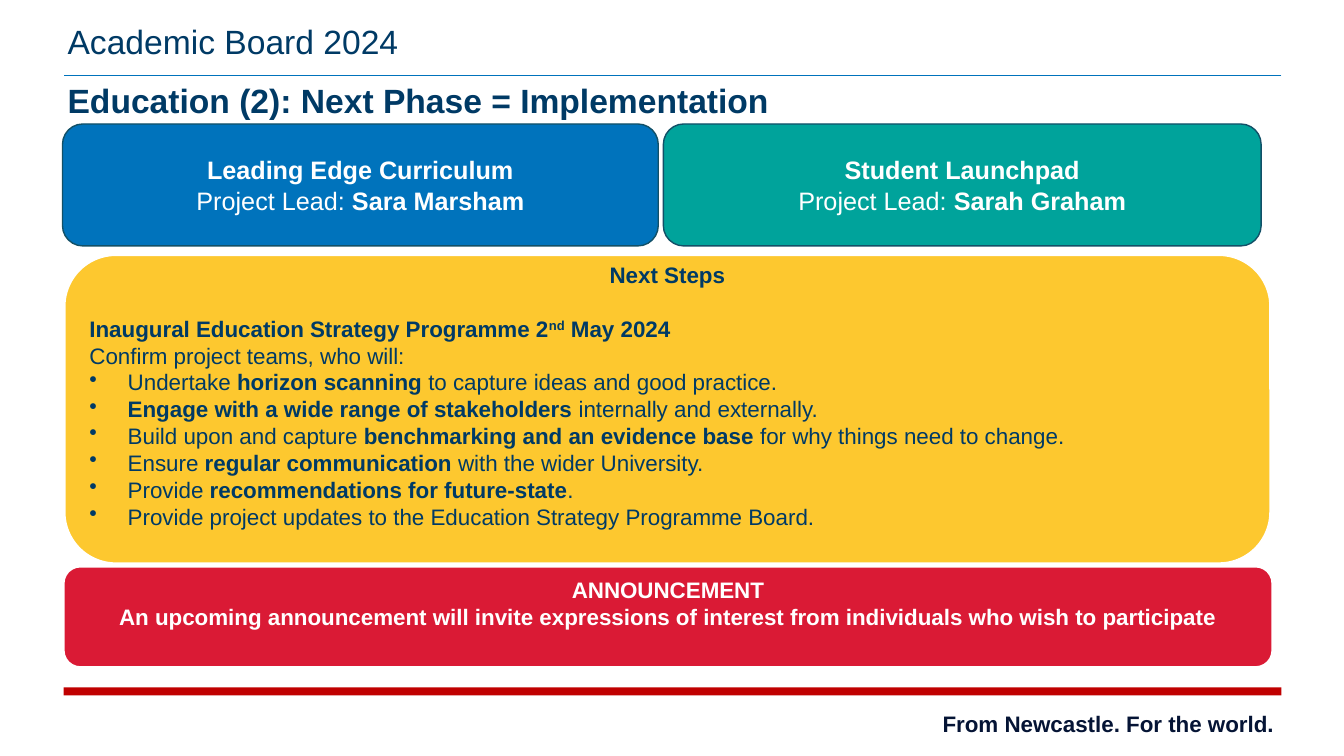
"""Build the Academic Board slide on the next phase of the education programme."""
import lxml.etree
import pptx
import pptx.dml.color
import pptx.enum.shapes
import pptx.enum.text
import pptx.oxml.ns
import pptx.util

COLORS = {
    "navy": "003A65", "ink": "051435", "blue": "0073BC", "teal": "00A39B",
    "outline": "125067", "yellow": "FDC82F", "red": "DA1A35",
    "rule": "C00000", "white": "FFFFFF",
}
SLIDE_WIDTH = pptx.util.Inches(13.33)
SLIDE_HEIGHT = pptx.util.Inches(7.5)
LEFT = pptx.enum.text.PP_ALIGN.LEFT
CENTER = pptx.enum.text.PP_ALIGN.CENTER
MIDDLE = pptx.enum.text.MSO_ANCHOR.MIDDLE
SHAPES = pptx.enum.shapes.MSO_SHAPE

PROJECTS = [
    ("Leading Edge Curriculum", "Sara Marsham", "blue", (4.65, 16.4, 44.33, 16.13)),
    ("Student Launchpad", "Sarah Graham", "teal", (49.36, 16.4, 44.48, 16.13)),
]
NEXT_STEPS = [
    "*Next Steps*",
    "*Inaugural Education Strategy Programme 2**nd** May 2024*",
    "Confirm project teams, who will:",
    "Undertake *horizon scanning *to capture ideas and good practice.",
    "*Engage with a wide range of stakeholders *internally and externally.",
    "Build upon and capture *benchmarking and an evidence base *for why things need to change.",
    "Ensure *regular communication *with the wider University.",
    "Provide *recommendations for future-state*.",
    "Provide project updates to the Education Strategy Programme Board.",
]
ANNOUNCEMENT = [
    "*ANNOUNCEMENT*",
    "*An upcoming announcement will invite expressions of interest "
    "from individuals who wish to participate*",
]


def rgb(name):
    """Return the named colour."""
    return pptx.dml.color.RGBColor.from_string(COLORS[name])


def area(left, top, width, height):
    """Turn percentages of the slide into lengths."""
    return (int(SLIDE_WIDTH * left / 100), int(SLIDE_HEIGHT * top / 100),
            int(SLIDE_WIDTH * width / 100), int(SLIDE_HEIGHT * height / 100))


def style_run(run, size, color, bold):
    """Set the font of one run."""
    run.font.name = "Arial"
    run.font.size = pptx.util.Pt(size)
    run.font.bold = bold
    run.font.color.rgb = rgb(color)


def set_indent(paragraph, inches, bullet):
    """Give a paragraph a hanging indent and a bullet, or neither."""
    properties = paragraph._p.get_or_add_pPr()
    indent = pptx.util.Inches(inches)
    properties.set("marL", str(indent))
    properties.set("indent", str(-indent))
    tag = "a:buChar" if bullet else "a:buNone"
    element = lxml.etree.SubElement(properties, pptx.oxml.ns.qn(tag))
    if bullet:
        element.set("char", bullet)


def write_lines(shape, lines, size, color):
    """Write centred lines in which asterisks enclose bold words."""
    frame = shape.text_frame
    frame.word_wrap = True
    frame.vertical_anchor = MIDDLE
    for index, line in enumerate(lines):
        paragraph = frame.paragraphs[0] if index == 0 else frame.add_paragraph()
        paragraph.alignment = CENTER
        for position, words in enumerate(line.split("*")):
            if words:
                run = paragraph.add_run()
                run.text = words
                style_run(run, size, color, position % 2 == 1)


def add_block(slide, preset, share, fill, outline=None, width=1):
    """Add a filled shape with an optional outline."""
    shape = slide.shapes.add_shape(preset, *area(*share))
    shape.shadow.inherit = False
    shape.fill.solid()
    shape.fill.fore_color.rgb = rgb(fill)
    if outline:
        shape.line.color.rgb = rgb(outline)
        shape.line.width = pptx.util.Pt(width)
    else:
        shape.line.fill.background()
    return shape


def fill_placeholder(placeholder, text, share, bold):
    """Place a heading in a template placeholder."""
    (placeholder.left, placeholder.top,
     placeholder.width, placeholder.height) = area(*share)
    frame = placeholder.text_frame
    frame.text = text
    frame.auto_size = pptx.enum.text.MSO_AUTO_SIZE.NONE
    frame.vertical_anchor = MIDDLE
    paragraph = frame.paragraphs[0]
    set_indent(paragraph, 0, None)
    paragraph.alignment = LEFT
    paragraph.line_spacing = 0.9
    paragraph.space_before = pptx.util.Pt(0)
    style_run(paragraph.runs[0], 24, "navy", bold)


def add_header_rule(slide):
    """Draw the thin line between the two headings."""
    left, top, width, _ = area(4.73, 10, 90.62, 0)
    connector = slide.shapes.add_connector(
        pptx.enum.shapes.MSO_CONNECTOR.STRAIGHT, left + width, top, left, top)
    connector.line.color.rgb = rgb("blue")
    connector.line.width = pptx.util.Pt(0.25)
    lxml.etree.SubElement(connector._element.spPr, pptx.oxml.ns.qn("a:effectLst"))


def add_tagline(slide):
    """Add the closing line at the foot of the slide."""
    box = slide.shapes.add_textbox(*area(69.39, 93.33, 26.78, 4.93))
    box.text_frame.word_wrap = True
    box.text_frame.text = "From Newcastle. For the world."
    style_run(box.text_frame.paragraphs[0].runs[0], 16, "ink", True)


def add_next_steps(slide):
    """Add the panel that lists the next steps."""
    panel = add_block(slide, SHAPES.ROUNDED_RECTANGLE,
                      (4.8, 33.73, 89.72, 40.8), "yellow", "white", 1.5)
    write_lines(panel, NEXT_STEPS, 16, "navy")
    frame = panel.text_frame
    frame.margin_top = 0
    frame.margin_bottom = pptx.util.Inches(0.27)
    programme, introduction, *steps = frame.paragraphs[1:]
    programme.alignment = introduction.alignment = LEFT
    programme.space_before = pptx.util.Pt(19)
    programme.runs[1]._r.get_or_add_rPr().set("baseline", "30000")
    for step in steps:
        step.alignment = LEFT
        set_indent(step, 0.38, "•")


def add_announcement(slide):
    """Add the announcement panel."""
    panel = add_block(slide, SHAPES.ROUNDED_RECTANGLE,
                      (4.73, 74.93, 89.95, 13.33), "red", "white", 1.5)
    write_lines(panel, ANNOUNCEMENT, 16, "white")
    panel.text_frame.margin_bottom = pptx.util.Inches(0.32)


def main():
    """Build and save the presentation."""
    presentation = pptx.Presentation()
    presentation.slide_width = SLIDE_WIDTH
    presentation.slide_height = SLIDE_HEIGHT
    slide = presentation.slides.add_slide(presentation.slide_layouts[1])
    add_block(slide, SHAPES.RECTANGLE, (4.73, 90.93, 90.62, 1.07), "rule")
    add_header_rule(slide)
    add_tagline(slide)
    fill_placeholder(slide.shapes.title, "Education (2): Next Phase = Implementation",
                     (4.28, 7.07, 86.27, 12.93), True)
    fill_placeholder(slide.placeholders[1], "Academic Board 2024",
                     (4.28, 2.67, 74.19, 6.13), False)
    for name, lead, fill, share in PROJECTS:
        card = add_block(slide, SHAPES.ROUNDED_RECTANGLE, share, fill, "outline")
        write_lines(card, [f"*{name}*", f"Project Lead: *{lead}*"], 18, "white")
    add_next_steps(slide)
    add_announcement(slide)
    presentation.save("out.pptx")


if __name__ == "__main__":
    main()
